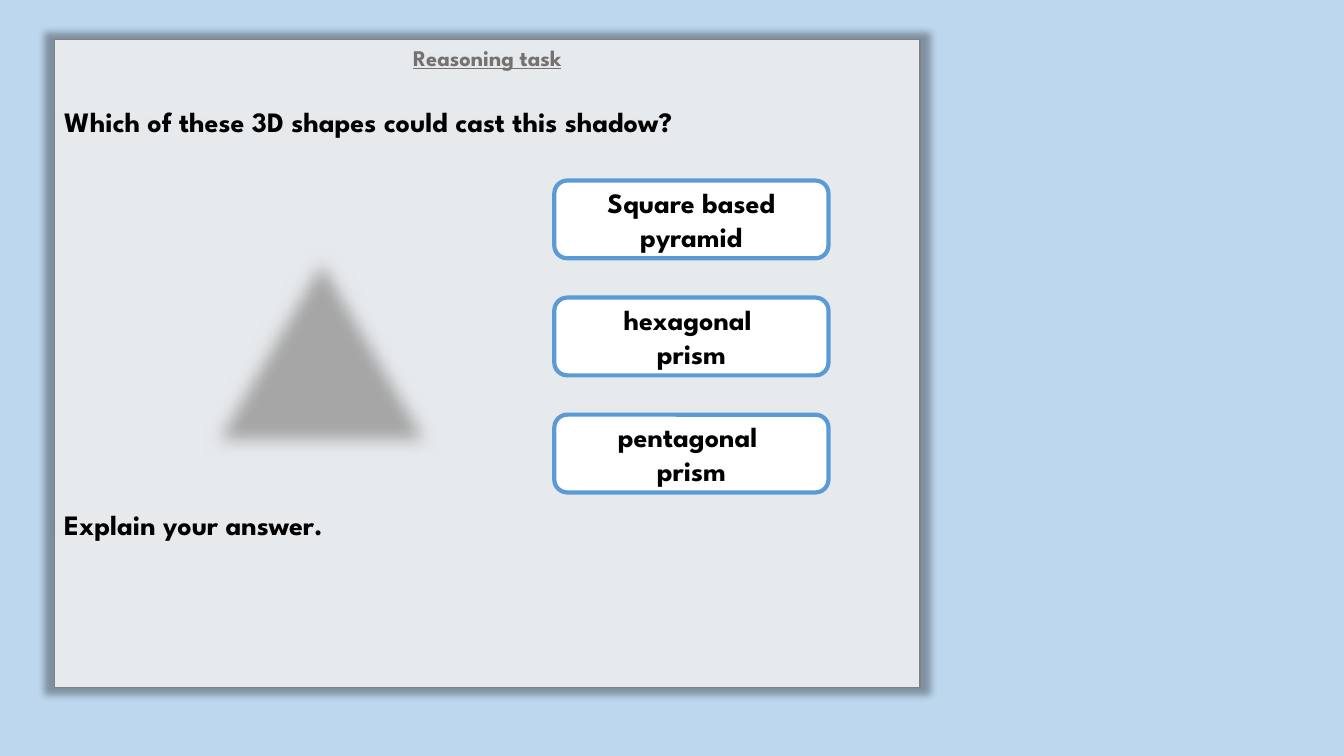
from lxml import etree
from pptx import Presentation
from pptx.dml.color import RGBColor
from pptx.enum.shapes import MSO_SHAPE
from pptx.enum.text import MSO_ANCHOR, PP_ALIGN
from pptx.oxml.ns import qn
from pptx.util import Cm, Pt

RECT, ROUND = MSO_SHAPE.RECTANGLE, MSO_SHAPE.ROUNDED_RECTANGLE
TRIANGLE = MSO_SHAPE.ISOSCELES_TRIANGLE
TOP, MIDDLE = MSO_ANCHOR.TOP, MSO_ANCHOR.MIDDLE
LEFT, CENTER = PP_ALIGN.LEFT, PP_ALIGN.CENTER

TITLE = "Reasoning task"
QUESTION = "Which of these 3D shapes could cast this shadow?"
PROMPT = "Explain your answer."
ANSWERS = [
    ("Square based", "pyramid"),
    ("hexagonal ", "prism"),
    ("pentagonal ", "prism"),
]

THEME = {
    "font": "League Spartan",
    "title_size": 16, "body_size": 20,
    "background": "BDD7EE", "white": "FFFFFF", "text": "000000",
    "title": "767171", "outline": "808080",
    "triangle": "A6A6A6", "answer_line": "5B9BD5",
}

# left, top, width, height in cm
PANEL = (1.37, 0.99, 21.82, 16.33)
SHADOW_TRIANGLE = (4.62, 5.49, 6.96, 5.99)
FIRST_ANSWER = (13.97, 4.55, 6.91, 1.96)
ANSWER_PITCH = 2.95
# space above, in points
QUESTION_GAP, PROMPT_GAP = 24, 264


def color(name):
    return RGBColor.from_string(THEME[name])


def add_box(slide, kind, box, fill, line, width):
    sp = slide.shapes.add_shape(kind, *(Cm(v) for v in box))
    sp.shadow.inherit = False
    sp.fill.solid()
    sp.fill.fore_color.rgb = color(fill)
    sp.line.color.rgb = color(line)
    sp.line.width = Pt(width)
    return sp


def add_effect(sp, tag, **attrs):
    effects = sp._element.spPr.find(qn("a:effectLst"))
    return etree.SubElement(effects, qn(tag), attrs)


def set_frame(sp, anchor, inset=None):
    tf = sp.text_frame
    tf.word_wrap = True
    tf.vertical_anchor = anchor
    if inset is not None:
        tf.margin_left = tf.margin_right = Cm(inset)
        tf.margin_top = tf.margin_bottom = Cm(inset)
    return tf


def add_text(tf, text, size="body_size", fill="text", align=LEFT,
             underline=False, before=0):
    """Write a paragraph, using the frame's first one while it is empty."""
    p = tf.paragraphs[0] if not tf.text else tf.add_paragraph()
    p.alignment = align
    p.space_before = Pt(before)
    r = p.add_run()
    r.text = text
    r.font.name = THEME["font"]
    r.font.size = Pt(THEME[size])
    r.font.bold = True
    r.font.underline = underline
    r.font.color.rgb = color(fill)


def add_panel(slide):
    sp = add_box(slide, RECT, PANEL, "white", "outline", 1)
    fill_color = sp._element.spPr.find(qn("a:solidFill"))[0]
    etree.SubElement(fill_color, qn("a:alpha"), val="82000")
    glow = add_effect(sp, "a:outerShdw", blurRad=str(Pt(5)), sx="102000",
                      sy="102000", algn="ctr", rotWithShape="0")
    black = etree.SubElement(glow, qn("a:srgbClr"), val=THEME["text"])
    etree.SubElement(black, qn("a:alpha"), val="40000")
    tf = set_frame(sp, TOP)
    add_text(tf, TITLE, size="title_size", fill="title", align=CENTER,
             underline=True)
    add_text(tf, QUESTION, before=QUESTION_GAP)
    add_text(tf, PROMPT, before=PROMPT_GAP)


def add_answers(slide):
    left, top, width, height = FIRST_ANSWER
    for i, lines in enumerate(ANSWERS):
        box = (left, top + i * ANSWER_PITCH, width, height)
        sp = add_box(slide, ROUND, box, "white", "answer_line", 3)
        tf = set_frame(sp, MIDDLE, inset=0)
        for line in lines:
            add_text(tf, line, align=CENTER)


def main():
    prs = Presentation()
    prs.slide_width, prs.slide_height = Cm(33.87), Cm(19.05)
    s = prs.slides.add_slide(prs.slide_layouts[6])
    s.background.fill.solid()
    s.background.fill.fore_color.rgb = color("background")
    add_panel(s)
    triangle = add_box(s, TRIANGLE, SHADOW_TRIANGLE, "triangle", "outline", 1)
    add_effect(triangle, "a:softEdge", rad=str(Pt(12.5)))
    add_answers(s)
    prs.save("out.pptx")


if __name__ == "__main__":
    main()
